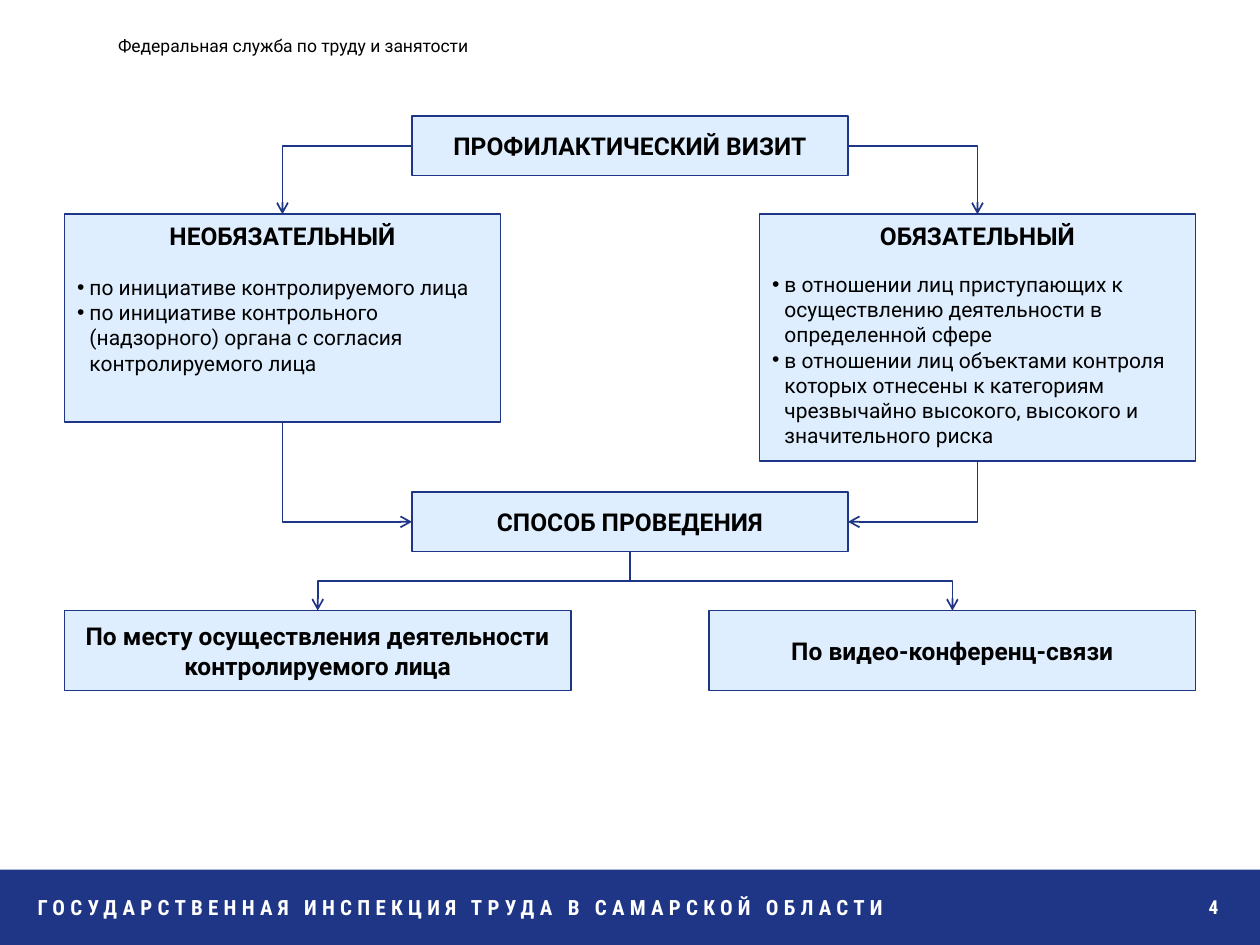
from dataclasses import dataclass

from lxml import etree
from pptx import Presentation
from pptx.dml.color import RGBColor
from pptx.enum.shapes import MSO_CONNECTOR, MSO_SHAPE
from pptx.enum.text import MSO_ANCHOR, MSO_AUTO_SIZE, PP_ALIGN
from pptx.oxml.ns import qn
from pptx.util import Cm, Pt

NAVY = RGBColor(0x1E, 0x36, 0x85)
PALE_BLUE = RGBColor(0xDE, 0xEE, 0xFE)
BLACK = RGBColor(0, 0, 0)
WHITE = RGBColor(0xFF, 0xFF, 0xFF)

RECTANGLE = MSO_SHAPE.RECTANGLE
ELBOW = MSO_CONNECTOR.ELBOW
LEFT, CENTER, RIGHT = PP_ALIGN.LEFT, PP_ALIGN.CENTER, PP_ALIGN.RIGHT
TOP, MIDDLE = MSO_ANCHOR.TOP, MSO_ANCHOR.MIDDLE
NO_AUTOFIT = MSO_AUTO_SIZE.NONE

# Lengths in centimetres
SLIDE_WIDTH, SLIDE_HEIGHT = 25.4, 19.05
EDGE = 1.3
BOX_WIDTH = 8.79
BAR_HEIGHT = 1.52
BAR_TOP = SLIDE_HEIGHT - BAR_HEIGHT


@dataclass(frozen=True)
class Area:
    left: float
    top: float
    width: float
    height: float

    @property
    def right(self) -> float:
        return self.left + self.width

    @property
    def bottom(self) -> float:
        return self.top + self.height

    @property
    def middle_x(self) -> float:
        return self.left + self.width / 2

    @property
    def middle_y(self) -> float:
        return self.top + self.height / 2

    def lengths(self) -> tuple:
        return Cm(self.left), Cm(self.top), Cm(self.width), Cm(self.height)


@dataclass(frozen=True)
class VisitKind:
    area: Area
    heading: str
    gap: float
    points: tuple


@dataclass(frozen=True)
class Arrow:
    start: tuple
    end: tuple
    preset: str = "bentConnector2"
    starts_down: bool = True


def centered(top: float) -> Area:
    return Area((SLIDE_WIDTH - BOX_WIDTH) / 2, top, BOX_WIDTH, 1.2)


def at_right_edge(top: float, width: float, height: float) -> Area:
    return Area(SLIDE_WIDTH - EDGE - width, top, width, height)


VISIT = centered(2.34)
METHOD = centered(9.92)
ON_SITE = Area(EDGE, 12.31, 10.21, 1.61)
BY_VIDEO = at_right_edge(12.31, 9.8, 1.61)
OPTIONAL = VisitKind(
    Area(EDGE, 4.32, BOX_WIDTH, 4.19), "НЕОБЯЗАТЕЛЬНЫЙ", 14,
    ("по инициативе контролируемого лица",
     "по инициативе контрольного (надзорного) органа с согласия контролируемого лица"))
MANDATORY = VisitKind(
    at_right_edge(4.32, BOX_WIDTH, 4.98), "ОБЯЗАТЕЛЬНЫЙ", 12.3,
    ("в отношении лиц приступающих к осуществлению деятельности в определенной сфере",
     "в отношении лиц объектами контроля которых отнесены к категориям "
     "чрезвычайно высокого, высокого и значительного риска"))

FORK_START = (METHOD.middle_x, METHOD.bottom)
ARROWS = (
    Arrow((VISIT.left, VISIT.middle_y), (OPTIONAL.area.middle_x, OPTIONAL.area.top),
          starts_down=False),
    Arrow((VISIT.right, VISIT.middle_y), (MANDATORY.area.middle_x, MANDATORY.area.top),
          starts_down=False),
    Arrow((OPTIONAL.area.middle_x, OPTIONAL.area.bottom), (METHOD.left, METHOD.middle_y)),
    Arrow((MANDATORY.area.middle_x, MANDATORY.area.bottom), (METHOD.right, METHOD.middle_y)),
    Arrow(FORK_START, (BY_VIDEO.middle_x, BY_VIDEO.top), "bentConnector3"),
    Arrow(FORK_START, (ON_SITE.middle_x, ON_SITE.top), "bentConnector3"),
)


def write(paragraph, text: str, *, size: float = 14, bold: bool = True, color=BLACK,
          font: str = "Roboto", align=CENTER, before: float = 0, bullet: bool = False,
          spacing: int = 0) -> None:
    properties = paragraph._p.get_or_add_pPr()
    indent = Cm(0.25) if bullet else 0
    properties.set("marL", str(indent))
    properties.set("indent", str(-indent))
    if bullet:
        etree.SubElement(properties, qn("a:buFont")).set("typeface", "Arial")
        etree.SubElement(properties, qn("a:buChar")).set("char", "•")
    else:
        etree.SubElement(properties, qn("a:buNone"))
    paragraph.alignment = align
    paragraph.space_before = Pt(before)
    span = paragraph.add_run()
    span.text = text
    span.font.name, span.font.size = font, Pt(size)
    span.font.bold, span.font.color.rgb = bold, color
    if spacing:
        span.font._element.set("spc", str(spacing))


def style_box(box, area: Area, anchor=MIDDLE):
    box.left, box.top, box.width, box.height = area.lengths()
    box.fill.solid()
    box.fill.fore_color.rgb = PALE_BLUE
    box.line.color.rgb = NAVY
    box.line.width = Pt(1)
    frame = box.text_frame
    frame.word_wrap = True
    frame.auto_size = NO_AUTOFIT
    frame.vertical_anchor = anchor
    return frame


def add_box(page, area: Area, text: str) -> None:
    box = page.shapes.add_shape(RECTANGLE, *area.lengths())
    box.shadow.inherit = False
    write(style_box(box, area).paragraphs[0], text)


def fill_visit_kind(box, kind: VisitKind) -> None:
    frame = style_box(box, kind.area, TOP)
    write(frame.paragraphs[0], kind.heading)
    for index, point in enumerate(kind.points):
        write(frame.add_paragraph(), point, size=12, bold=False, align=LEFT,
              before=0 if index else kind.gap, bullet=True)


def add_label(page, area: Area, text: str, *, anchor=TOP, **text_format) -> None:
    frame = page.shapes.add_textbox(*area.lengths()).text_frame
    frame.word_wrap = True
    frame.vertical_anchor = anchor
    write(frame.paragraphs[0], text, **text_format)


def add_arrow(page, arrow: Arrow) -> None:
    """Draw an elbow arrow; one that starts downwards is a rotated horizontal elbow."""
    (x1, y1), (x2, y2) = arrow.start, arrow.end
    side = 1 if x2 > x1 else -1
    if arrow.starts_down:
        middle_x, middle_y = (x1 + x2) / 2, (y1 + y2) / 2
        half_width, half_height = (y2 - y1) / 2, abs(x2 - x1) / 2
        x1, x2 = middle_x + side * half_width, middle_x - side * half_width
        y1, y2 = middle_y - half_height, middle_y + half_height
    connector = page.shapes.add_connector(ELBOW, Cm(x1), Cm(y1), Cm(x2), Cm(y2))
    connector.line.color.rgb = NAVY
    connector.line.width = Pt(1)
    properties = connector._element.spPr
    properties.find(qn("a:prstGeom")).set("prst", arrow.preset)
    if arrow.starts_down:
        properties.find(qn("a:xfrm")).set("rot", str((180 + side * 90) * 60000))
    etree.SubElement(connector.line._get_or_add_ln(), qn("a:tailEnd")).set("type", "arrow")
    etree.SubElement(properties, qn("a:effectLst"))


def main() -> None:
    deck = Presentation()
    deck.slide_width, deck.slide_height = Cm(SLIDE_WIDTH), Cm(SLIDE_HEIGHT)
    page = deck.slides.add_slide(deck.slide_layouts.get_by_name("Two Content"))
    title, optional_box, mandatory_box = page.placeholders

    bar = page.shapes.add_shape(RECTANGLE, *Area(0, BAR_TOP, SLIDE_WIDTH, BAR_HEIGHT).lengths())
    bar.shadow.inherit = False
    bar.fill.solid()
    bar.fill.fore_color.rgb = NAVY
    bar.line.fill.background()
    add_label(page, Area(2.13, 0.58, 9.17, 0.69), "Федеральная служба по труду и занятости",
              size=10, bold=False, align=LEFT)
    add_label(page, Area(0.51, 17.91, 21, 0.76),
              "ГОСУДАРСТВЕННАЯ ИНСПЕКЦИЯ ТРУДА В САМАРСКОЙ ОБЛАСТИ", size=12, color=WHITE,
              font="Roboto Condensed", align=LEFT, spacing=300)
    add_label(page, Area(21.79, 17.78, 3.02, 1.02), "4", anchor=MIDDLE, size=11, color=WHITE,
              font="Roboto Condensed", align=RIGHT)

    write(style_box(title, VISIT).paragraphs[0], "ПРОФИЛАКТИЧЕСКИЙ ВИЗИТ")
    fill_visit_kind(optional_box, OPTIONAL)
    fill_visit_kind(mandatory_box, MANDATORY)
    add_box(page, METHOD, "СПОСОБ ПРОВЕДЕНИЯ")
    add_box(page, ON_SITE, "По месту осуществления деятельности контролируемого лица")
    add_box(page, BY_VIDEO, "По видео-конференц-связи")
    for arrow in ARROWS:
        add_arrow(page, arrow)
    deck.save("out.pptx")


if __name__ == "__main__":
    main()
